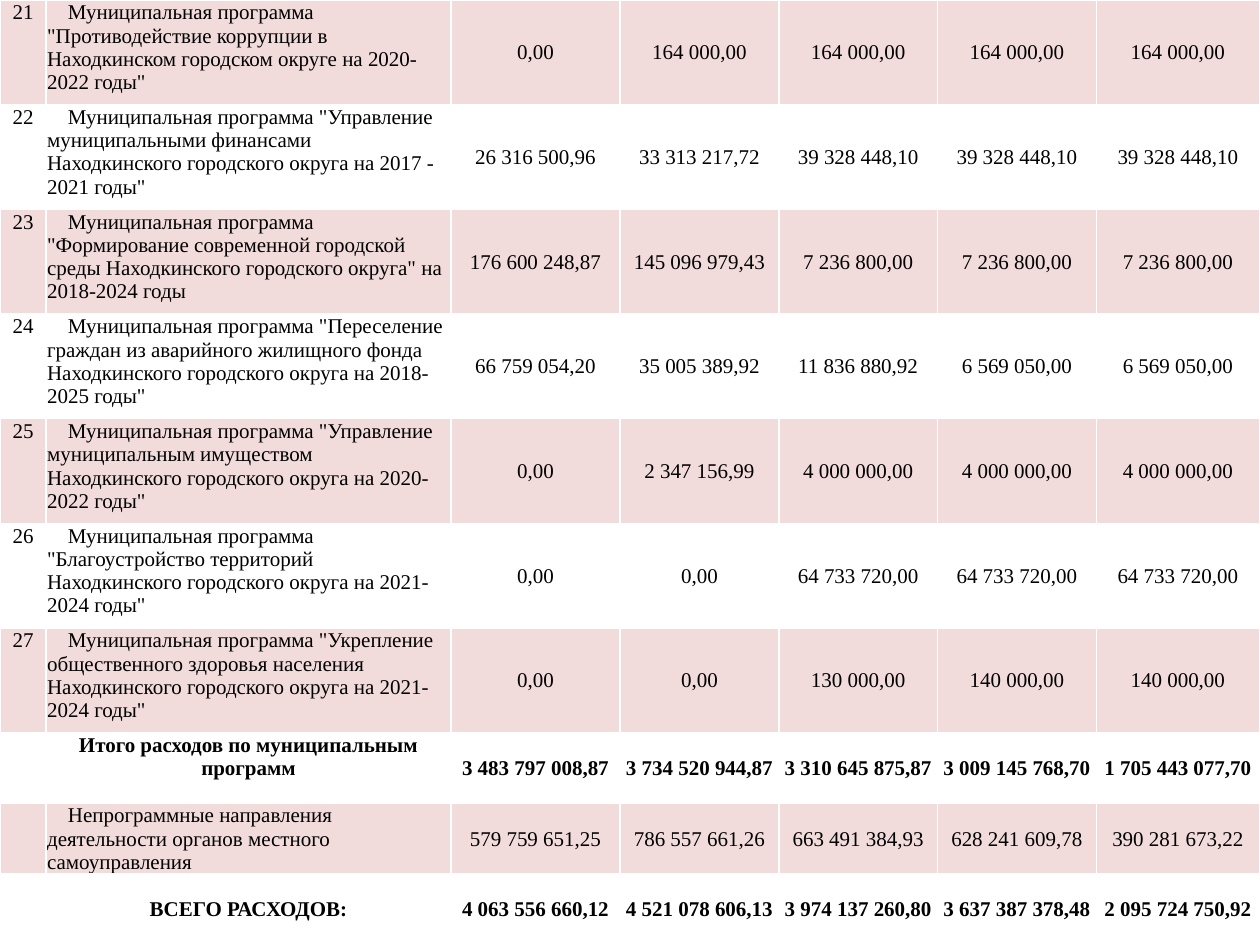
from pptx import Presentation
from pptx.dml.color import RGBColor
from pptx.enum.text import MSO_ANCHOR as Anchor, PP_ALIGN as Align
from pptx.util import Cm, Pt

BLACK = RGBColor(0x00, 0x00, 0x00)
WHITE = RGBColor(0xFF, 0xFF, 0xFF)
PINK = RGBColor(0xF2, 0xDC, 0xDB)

COLUMN_WIDTHS = [0.93, 8.16, 3.41, 3.2, 3.2, 3.2, 3.29]
PROGRAM_HEIGHT, SUMMARY_HEIGHT = 2.11, 1.42

# Number, name, then the amounts by year
PROGRAMS = [
    ("21", 'Муниципальная программа "Противодействие коррупции в Находкинском городском округе на 2020-2022 годы"',
     "0,00", "164 000,00", "164 000,00", "164 000,00", "164 000,00"),
    ("22", 'Муниципальная программа "Управление муниципальными финансами Находкинского городского округа на 2017 - 2021 годы"',
     "26 316 500,96", "33 313 217,72", "39 328 448,10", "39 328 448,10", "39 328 448,10"),
    ("23", 'Муниципальная программа "Формирование современной городской среды Находкинского городского округа" на 2018-2024 годы',
     "176 600 248,87", "145 096 979,43", "7 236 800,00", "7 236 800,00", "7 236 800,00"),
    ("24", 'Муниципальная программа "Переселение граждан из аварийного жилищного фонда Находкинского городского округа на 2018-2025 годы"',
     "66 759 054,20", "35 005 389,92", "11 836 880,92", "6 569 050,00", "6 569 050,00"),
    ("25", 'Муниципальная программа "Управление муниципальным имуществом Находкинского городского округа на 2020-2022 годы"',
     "0,00", "2 347 156,99", "4 000 000,00", "4 000 000,00", "4 000 000,00"),
    ("26", 'Муниципальная программа "Благоустройство территорий Находкинского городского округа на 2021-2024 годы"',
     "0,00", "0,00", "64 733 720,00", "64 733 720,00", "64 733 720,00"),
    ("27", 'Муниципальная программа "Укрепление общественного здоровья населения Находкинского городского округа на 2021-2024 годы"',
     "0,00", "0,00", "130 000,00", "140 000,00", "140 000,00"),
]
PROGRAM_TOTAL = ("", "Итого расходов по муниципальным программ",
                 "3 483 797 008,87", "3 734 520 944,87", "3 310 645 875,87",
                 "3 009 145 768,70", "1 705 443 077,70")
OTHER_SPENDING = ("", "Непрограммные направления деятельности органов местного самоуправления",
                  "579 759 651,25", "786 557 661,26", "663 491 384,93",
                  "628 241 609,78", "390 281 673,22")
GRAND_TOTAL = ("", "ВСЕГО РАСХОДОВ:",
               "4 063 556 660,12", "4 521 078 606,13", "3 974 137 260,80",
               "3 637 387 378,48", "2 095 724 750,92")


class BudgetPage:
    font_name = "Times New Roman"
    font_size = Pt(12)
    first_line_indent = Cm(0.42)
    cell_margin = Cm(0.02)

    def __init__(self, deck):
        self.page = deck.slides.add_slide(deck.slide_layouts[6])

    def table(self, rows, widths, heights):
        frame = self.page.shapes.add_table(
            len(rows), len(widths), 0, 0, Cm(sum(widths)), Cm(sum(heights)))
        table = frame.table
        table.first_row = table.horz_banding = False
        for column, width in zip(table.columns, widths):
            column.width = Cm(width)
        for row, height in zip(table.rows, heights):
            row.height = Cm(height)
        for index, values in enumerate(rows):
            is_total = values in (PROGRAM_TOTAL, GRAND_TOTAL)
            fill = WHITE if index % 2 else PINK
            for column, text in enumerate(values):
                is_name = column == 1 and not is_total
                is_middle = column > 1 or values is GRAND_TOTAL
                self.cell(table.cell(index, column), text, fill, is_total, is_name, is_middle)

    def cell(self, cell, text, fill, bold, is_name, is_middle):
        cell.fill.solid()
        cell.fill.fore_color.rgb = fill
        cell.margin_left = cell.margin_right = cell.margin_top = self.cell_margin
        cell.margin_bottom = 0
        cell.vertical_anchor = Anchor.MIDDLE if is_middle else Anchor.TOP
        cell.text = text
        para = cell.text_frame.paragraphs[0]
        para.alignment = Align.LEFT if is_name else Align.CENTER
        if is_name:
            para._p.get_or_add_pPr().set("indent", str(self.first_line_indent))
        para.font.name = self.font_name
        para.font.size = self.font_size
        para.font.bold = bold
        para.font.color.rgb = BLACK


def main():
    deck = Presentation()
    deck.slide_width, deck.slide_height = Cm(25.4), Cm(19.05)
    summary = [PROGRAM_TOTAL, OTHER_SPENDING, GRAND_TOTAL]
    heights = [PROGRAM_HEIGHT] * len(PROGRAMS) + [SUMMARY_HEIGHT] * len(summary)
    BudgetPage(deck).table(PROGRAMS + summary, COLUMN_WIDTHS, heights)
    deck.save("out.pptx")


if __name__ == "__main__":
    main()
